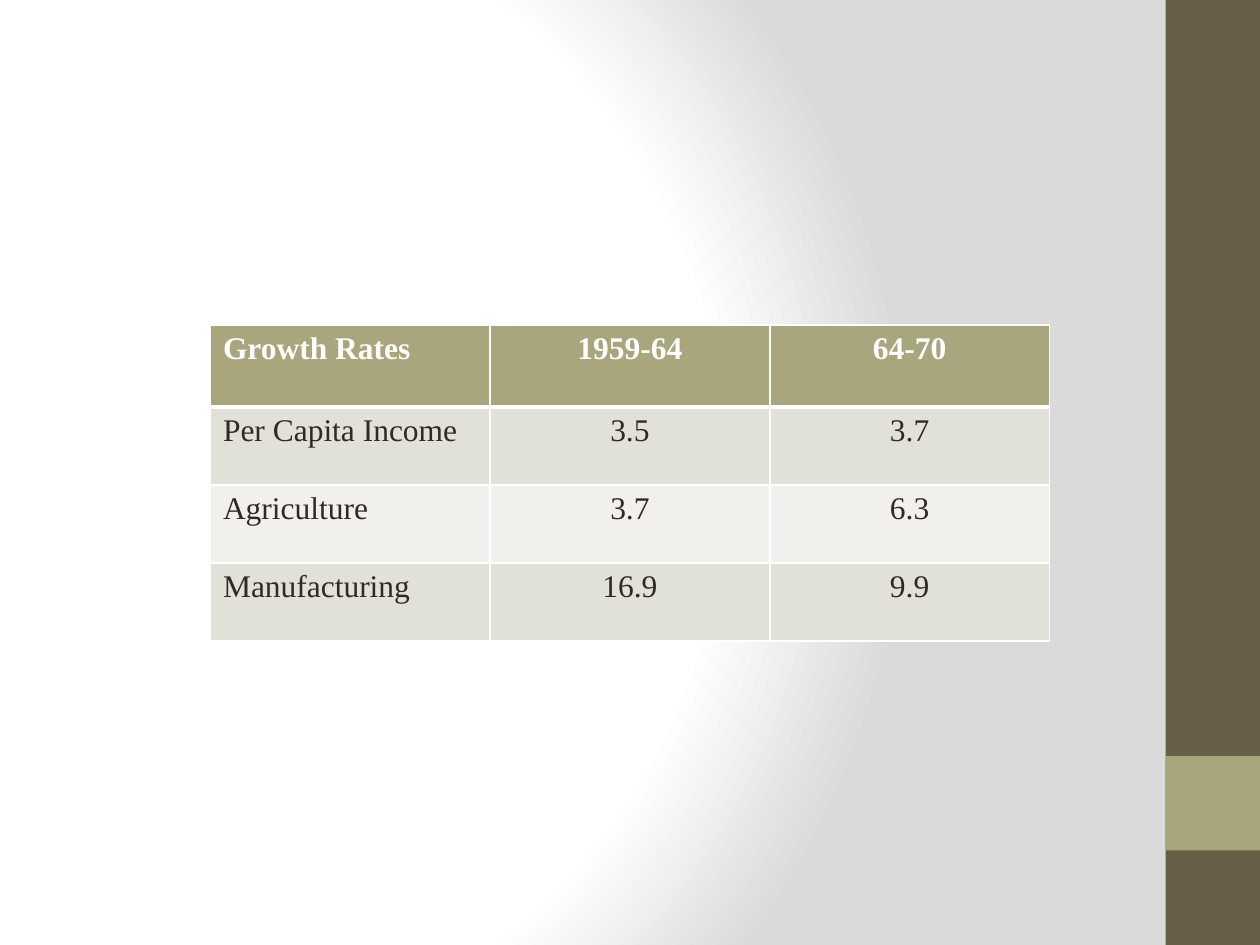
from pptx import Presentation
from pptx.dml.color import RGBColor
from pptx.enum.shapes import MSO_SHAPE
from pptx.enum.text import PP_ALIGN
from pptx.oxml import parse_xml
from pptx.oxml.ns import nsdecls
from pptx.util import Inches, Pt

RECT = MSO_SHAPE.RECTANGLE
LEFT, CENTER = PP_ALIGN.LEFT, PP_ALIGN.CENTER
ROWS = [
    ["Growth Rates", "1959-64", "64-70"],
    ["Per Capita Income", "3.5", "3.7"],
    ["Agriculture", "3.7", "6.3"],
    ["Manufacturing", "16.9", "9.9"],
]


def rgb(value):
    return RGBColor.from_string(value)


class GrowthSlide:
    """Holds the style and the current slide."""

    font, size = "Times New Roman", 18
    white, ink, olive, brown = "FFFFFF", "2F2B20", "A9A57C", "675E47"
    bands = ["E2E1D7", "F1F0EC"]

    def __init__(self, prs):
        self.s = prs.slides.add_slide(prs.slide_layouts[6])

    def background(self, stops):
        self.s.background.fill.gradient()
        old = self.s.element.xpath(".//p:bgPr/a:gradFill")[0]
        gs = "".join(
            f'<a:gs pos="{pos * 1000}"><a:srgbClr val="{color}"/></a:gs>'
            for pos, color in stops
        )
        new = parse_xml(
            f'<a:gradFill {nsdecls("a")} rotWithShape="1"><a:gsLst>{gs}</a:gsLst>'
            '<a:path path="circle"><a:fillToRect l="20000" t="50000" '
            'r="100000" b="50000"/></a:path></a:gradFill>'
        )
        old.getparent().replace(old, new)

    def rect(self, x, y, w, h, color):
        sp = self.s.shapes.add_shape(RECT, Inches(x), Inches(y), Inches(w), Inches(h))
        sp.shadow.inherit = False
        sp.fill.solid()
        sp.fill.fore_color.rgb = rgb(color)
        sp.line.fill.background()

    def border(self, cell, side, width):
        cell._tc.get_or_add_tcPr().append(parse_xml(
            f'<a:ln{side} {nsdecls("a")} w="{Pt(width)}"><a:solidFill>'
            f'<a:srgbClr val="{self.white}"/></a:solidFill></a:ln{side}>'
        ))

    def cell(self, cell, text, row, col):
        header = row == 0
        widths = {"L": 1, "R": 1, "T": 3 if row == 1 else 1, "B": 3 if header else 1}
        for side, width in widths.items():
            self.border(cell, side, width)
        cell.fill.solid()
        cell.fill.fore_color.rgb = rgb(self.olive if header else self.bands[(row - 1) % 2])
        p = cell.text_frame.paragraphs[0]
        p.alignment = CENTER if col else LEFT
        r = p.add_run()
        r.text = text
        r.font.name, r.font.size, r.font.bold = self.font, Pt(self.size), header
        r.font.color.rgb = rgb(self.white if header else self.ink)

    def table(self, x, y, col_width, row_heights, rows):
        n = len(rows[0])
        tbl = self.s.shapes.add_table(
            len(rows), n, Inches(x), Inches(y),
            Inches(col_width * n), Inches(sum(row_heights)),
        ).table
        for column in tbl.columns:
            column.width = Inches(col_width)
        for i, (height, texts) in enumerate(zip(row_heights, rows)):
            tbl.rows[i].height = Inches(height)
            for j, text in enumerate(texts):
                self.cell(tbl.cell(i, j), text, i, j)


def main():
    prs = Presentation()
    prs.slide_width, prs.slide_height = Inches(10), Inches(7.5)
    slide = GrowthSlide(prs)
    slide.background([(0, "FFFFFF"), (75, "FFFFFF"), (100, "DADADA")])
    slide.rect(9.25, 0, 0.75, 7.5, slide.brown)
    slide.rect(9.25, 6, 0.75, 0.75, slide.olive)
    slide.table(1.67, 2.58, 2.22, [0.65, 0.62, 0.62, 0.62], ROWS)
    prs.save("out.pptx")


if __name__ == "__main__":
    main()
